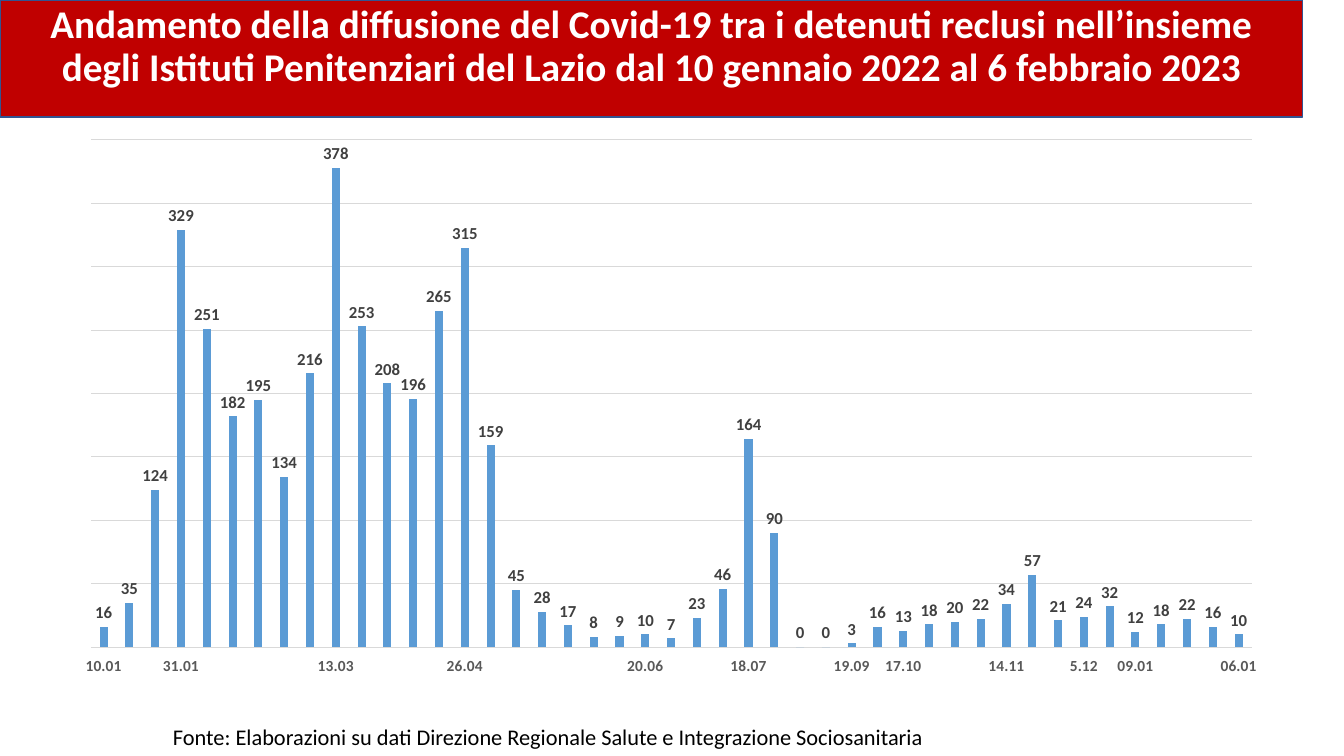
from dataclasses import dataclass

from lxml import etree
from pptx import Presentation
from pptx.chart.data import CategoryChartData
from pptx.dml.color import RGBColor
from pptx.enum.chart import XL_CHART_TYPE, XL_LABEL_POSITION, XL_TICK_LABEL_POSITION, XL_TICK_MARK
from pptx.enum.text import MSO_ANCHOR, MSO_AUTO_SIZE, PP_ALIGN
from pptx.oxml.ns import qn
from pptx.util import Cm, Pt

COLUMNS = XL_CHART_TYPE.COLUMN_CLUSTERED
OUTSIDE_END = XL_LABEL_POSITION.OUTSIDE_END
LABELS_LOW = XL_TICK_LABEL_POSITION.LOW
NO_TICK = XL_TICK_MARK.NONE
TOP = MSO_ANCHOR.TOP
NO_AUTOFIT = MSO_AUTO_SIZE.NONE
FIT_SHAPE = MSO_AUTO_SIZE.SHAPE_TO_FIT_TEXT
CENTER, LEFT = PP_ALIGN.CENTER, PP_ALIGN.LEFT


@dataclass(frozen=True)
class Theme:
    """Colours, font and type sizes of the slide."""
    font: str = "Calibri"
    banner: str = "C00000"
    banner_line: str = "325491"
    banner_text: str = "FFFFFF"
    text: str = "000000"
    column: str = "5B9BD5"
    grid: str = "D9D9D9"
    axis_text: str = "595959"
    label_text: str = "404040"
    title_size: int = 28
    source_size: int = 16
    label_size: int = 12
    axis_size: int = 11
    chart_size: int = 10


THEME = Theme()
TITLE = ("Andamento della diffusione del Covid-19 tra i detenuti reclusi nell’insieme "
         "degli Istituti Penitenziari del Lazio dal 10 gennaio 2022 al 6 febbraio 2023")
SOURCE = "Fonte: Elaborazioni su dati Direzione Regionale Salute e Integrazione Sociosanitaria"
CASES = [16, 35, 124, 329, 251, 182, 195, 134, 216, 378, 253, 208, 196, 265, 315,
         159, 45, 28, 17, 8, 9, 10, 7, 23, 46, 164, 90, 0, 0, 3,
         16, 13, 18, 20, 22, 34, 57, 21, 24, 32, 12, 18, 22, 16, 10]
DATES = {0: "10.01", 3: "31.01", 9: "13.03", 14: "26.04", 21: "20.06", 25: "18.07",
         29: "19.09", 31: "17.10", 35: "14.11", 38: "5.12", 40: "09.01", 44: "06.01"}
PLOT_AREA = {"x": 0.024, "y": 0.02, "w": 0.952, "h": 0.92}


def format_font(font, size, color, bold=False):
    """Apply the theme font with a size, colour and weight."""
    font.name = THEME.font
    font.size = Pt(size)
    font.bold = bold
    font.color.rgb = RGBColor.from_string(color)


def write_text(frame, text, *, size, color, bold=False, align=LEFT, spacing=1.0, before=0):
    """Write one formatted paragraph into a text frame."""
    paragraph = frame.paragraphs[0]
    paragraph.alignment = align
    paragraph.line_spacing = spacing
    paragraph.space_before = Pt(before)
    run = paragraph.add_run()
    run.text = text
    format_font(run.font, size, color, bold)


def format_line(line, color, width):
    """Give a line a solid colour and a width in points."""
    line.color.rgb = RGBColor.from_string(color)
    line.width = Pt(width)


def add_banner(slide, left, top, width, height):
    """Turn the title placeholder into the red banner."""
    title = slide.shapes.title
    title.left, title.top, title.width, title.height = left, top, width, height
    title.fill.solid()
    title.fill.fore_color.rgb = RGBColor.from_string(THEME.banner)
    format_line(title.line, THEME.banner_line, 1)
    frame = title.text_frame
    frame.word_wrap = True
    frame.auto_size = NO_AUTOFIT
    frame.vertical_anchor = TOP
    write_text(frame, TITLE, size=THEME.title_size, color=THEME.banner_text,
               bold=True, align=CENTER, spacing=0.9, before=10)


def add_source(slide, left, top, width, height):
    """Add the source line below the chart."""
    frame = slide.shapes.add_textbox(left, top, width, height).text_frame
    frame.word_wrap = False
    frame.auto_size = FIT_SHAPE
    write_text(frame, SOURCE, size=THEME.source_size, color=THEME.text)


def fix_plot_area(chart):
    """Place the inner plot area at fixed fractions of the chart."""
    plot_area = chart.plots[0]._element.getparent()
    for old_layout in plot_area.findall(qn("c:layout")):
        plot_area.remove(old_layout)
    layout = etree.Element(qn("c:layout"))
    manual = etree.SubElement(layout, qn("c:manualLayout"))
    settings = {"layoutTarget": "inner", "xMode": "edge", "yMode": "edge", **PLOT_AREA}
    for name, value in settings.items():
        etree.SubElement(manual, qn(f"c:{name}")).set("val", str(value))
    plot_area.insert(0, layout)


def format_axes(chart):
    """Style the date axis and hide the value axis behind its gridlines."""
    dates = chart.category_axis
    dates.major_tick_mark = dates.minor_tick_mark = NO_TICK
    dates.tick_label_position = LABELS_LOW
    format_line(dates.format.line, THEME.grid, 0.75)
    format_font(dates.tick_labels.font, THEME.axis_size, THEME.axis_text, True)
    dates._element.find(qn("c:txPr")).find(qn("a:bodyPr")).set("rot", "-60000000")
    values = chart.value_axis
    values.minimum_scale, values.maximum_scale, values.major_unit = 0, 400, 50
    values.has_major_gridlines = True
    format_line(values.major_gridlines.format.line, THEME.grid, 0.75)
    values.visible = False


def add_cases_chart(slide, left, top, width, height):
    """Add the column chart of cases by survey date."""
    data = CategoryChartData()
    data.categories = [DATES.get(index, "") for index in range(len(CASES))]
    data.add_series("Series 1", CASES)
    chart = slide.shapes.add_chart(COLUMNS, left, top, width, height, data).chart
    chart.has_legend = False
    chart.has_title = False
    format_font(chart.font, THEME.chart_size, THEME.text)
    plot = chart.plots[0]
    plot.gap_width, plot.overlap = 219, -27
    plot.vary_by_categories = False
    series = plot.series[0]
    series.format.fill.solid()
    series.format.fill.fore_color.rgb = RGBColor.from_string(THEME.column)
    labels = series.data_labels
    labels.show_value = True
    labels.position = OUTSIDE_END
    format_font(labels.font, THEME.label_size, THEME.label_text, True)
    format_axes(chart)
    fix_plot_area(chart)


def main():
    """Build the slide and save the presentation."""
    presentation = Presentation()
    presentation.slide_width, presentation.slide_height = Cm(33.87), Cm(19.05)
    slide = presentation.slides.add_slide(presentation.slide_layouts[5])
    add_banner(slide, Cm(0), Cm(0), Cm(32.82), Cm(2.95))
    add_source(slide, Cm(4.11), Cm(18.11), Cm(19.91), Cm(0.94))
    add_cases_chart(slide, Cm(1.55), Cm(3.25), Cm(30.73), Cm(13.89))
    presentation.save("out.pptx")


if __name__ == "__main__":
    main()
